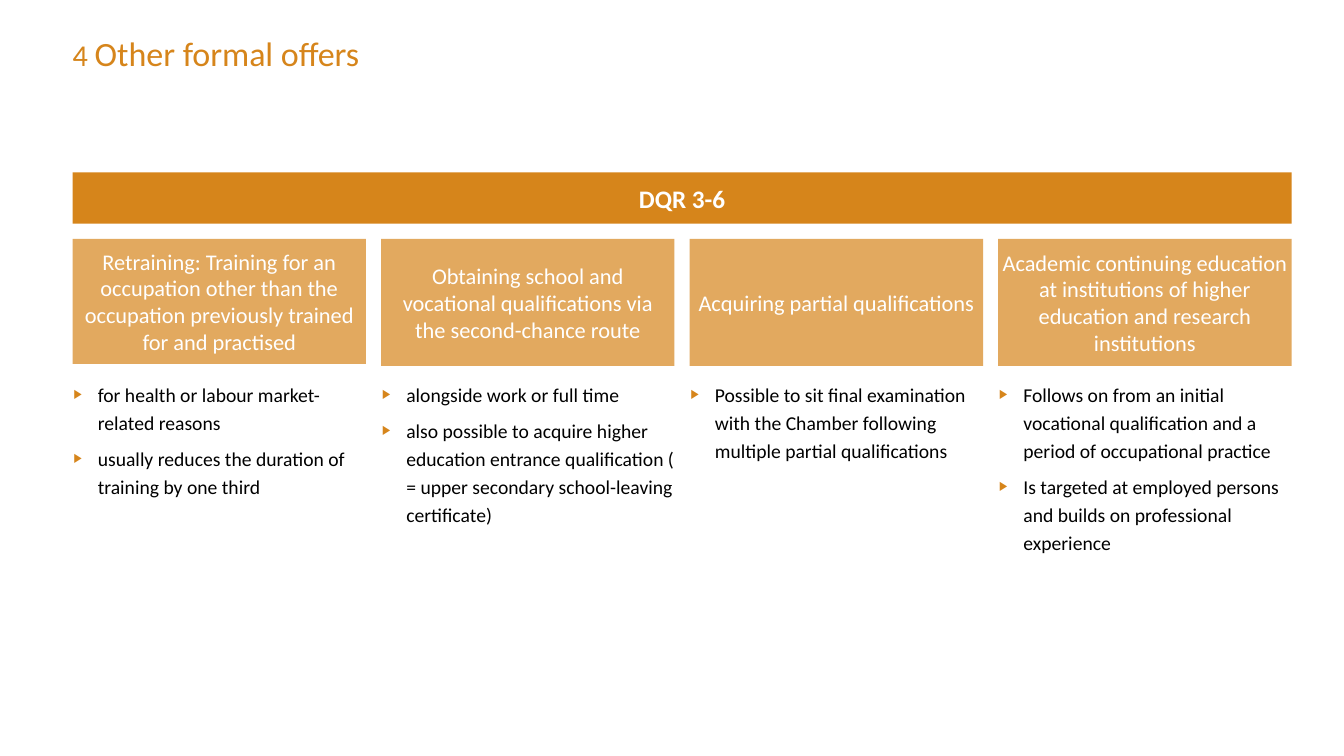
"""Build the slide on other formal offers at DQR levels 3 to 6."""
from lxml.etree import SubElement
from pptx import Presentation
from pptx.dml.color import RGBColor
from pptx.enum.shapes import MSO_SHAPE
from pptx.enum.text import MSO_ANCHOR, PP_ALIGN
from pptx.oxml.ns import qn
from pptx.util import Inches, Pt

FONT = "Calibri"
ORANGE, LIGHT_ORANGE, WHITE, BLACK = "D6851B", "E2A95F", "FFFFFF", "000000"
TITLE = [("4 ", 21.6), ("Other formal offers", 24.3)]
BANNER = "DQR 3-6"
OFFERS = [
    ("Retraining: Training for an occupation other than the occupation previously trained for and practised", 1.24,
     ["for health or labour market-related reasons",
      "usually reduces the duration of training by one third"]),
    ("Obtaining school and vocational qualifications via the second-chance route", 1.26,
     ["alongside work or full time",
      "also possible to acquire higher education entrance qualification ( = upper secondary school-leaving certificate)"]),
    ("Acquiring partial qualifications", 1.26,
     ["Possible to sit final examination with the Chamber following multiple partial qualifications"]),
    ("Academic continuing education at institutions of higher education and research institutions", 1.26,
     ["Follows on from an initial vocational qualification and a period of occupational practice",
      "Is targeted at employed persons\vand builds on professional experience"]),
]
LEFT, COLUMN_WIDTH, COLUMN_STEP = 0.72, 2.91, 3.06
FULL_WIDTH = (len(OFFERS) - 1) * COLUMN_STEP + COLUMN_WIDTH
LIST_OVERHANG, LIST_INDENT, HANGING = 0.3, 0.55, 0.24


def color(value):
    return RGBColor.from_string(value)


def style(run, size, hex_color, bold=False):
    run.font.name = FONT
    run.font.size = Pt(size)
    run.font.color.rgb = color(hex_color)
    run.font.bold = bold


def add_text_frame(slide, left, top, width, height):
    box = slide.shapes.add_textbox(Inches(left), Inches(top), Inches(width), Inches(height))
    frame = box.text_frame
    frame.word_wrap = True
    frame.margin_left = frame.margin_right = frame.margin_top = frame.margin_bottom = 0
    return frame


def add_block(slide, left, top, width, height, fill, text, size, bold=False, bottom=0.08):
    block = slide.shapes.add_shape(
        MSO_SHAPE.RECTANGLE, Inches(left), Inches(top), Inches(width), Inches(height))
    block.shadow.inherit = False
    block.fill.solid()
    block.fill.fore_color.rgb = color(fill)
    block.line.fill.background()
    frame = block.text_frame
    frame.word_wrap = True
    frame.vertical_anchor = MSO_ANCHOR.MIDDLE
    frame.margin_left = frame.margin_right = Inches(0.04)
    frame.margin_top, frame.margin_bottom = Inches(0.08), Inches(bottom)
    frame.text = text
    paragraph = frame.paragraphs[0]
    paragraph.alignment = PP_ALIGN.CENTER
    style(paragraph.runs[0], size, WHITE, bold)
    return paragraph


def add_bullet(paragraph):
    properties = paragraph._p.get_or_add_pPr()
    properties.set("marL", str(Inches(LIST_INDENT)))
    properties.set("indent", str(-Inches(HANGING)))
    bullet_color = SubElement(properties, qn("a:buClr"))
    SubElement(bullet_color, qn("a:srgbClr"), val=ORANGE)
    SubElement(properties, qn("a:buSzPct"), val="65000")
    SubElement(properties, qn("a:buFont"), typeface=FONT)
    SubElement(properties, qn("a:buChar"), char="▶")


def add_bullet_list(slide, left, items):
    frame = add_text_frame(slide, left - LIST_OVERHANG, 3.75, COLUMN_WIDTH + LIST_OVERHANG, 2.25)
    for index, item in enumerate(items):
        paragraph = frame.add_paragraph() if index else frame.paragraphs[0]
        paragraph.text = item
        add_bullet(paragraph)
        paragraph.line_spacing = Pt(20)
        paragraph.space_before = Pt(6 if index else 0)
        for run in paragraph.runs:
            style(run, 14, BLACK)


def main():
    presentation = Presentation()
    presentation.slide_width, presentation.slide_height = Inches(13.33), Inches(7.5)
    slide = presentation.slides.add_slide(presentation.slide_layouts[6])

    title = add_text_frame(slide, LEFT, 0.32, 9.84, 0.49).paragraphs[0]
    for text, size in TITLE:
        run = title.add_run()
        run.text = text
        style(run, size, ORANGE)

    banner = add_block(slide, LEFT, 1.71, FULL_WIDTH, 0.51, ORANGE, BANNER, 18, bold=True, bottom=0)
    banner.line_spacing = Pt(17)

    for column, (heading, height, items) in enumerate(OFFERS):
        left = LEFT + column * COLUMN_STEP
        add_block(slide, left, 2.37, COLUMN_WIDTH, height, LIGHT_ORANGE, heading, 16)
        add_bullet_list(slide, left, items)

    presentation.save("out.pptx")


if __name__ == "__main__":
    main()
